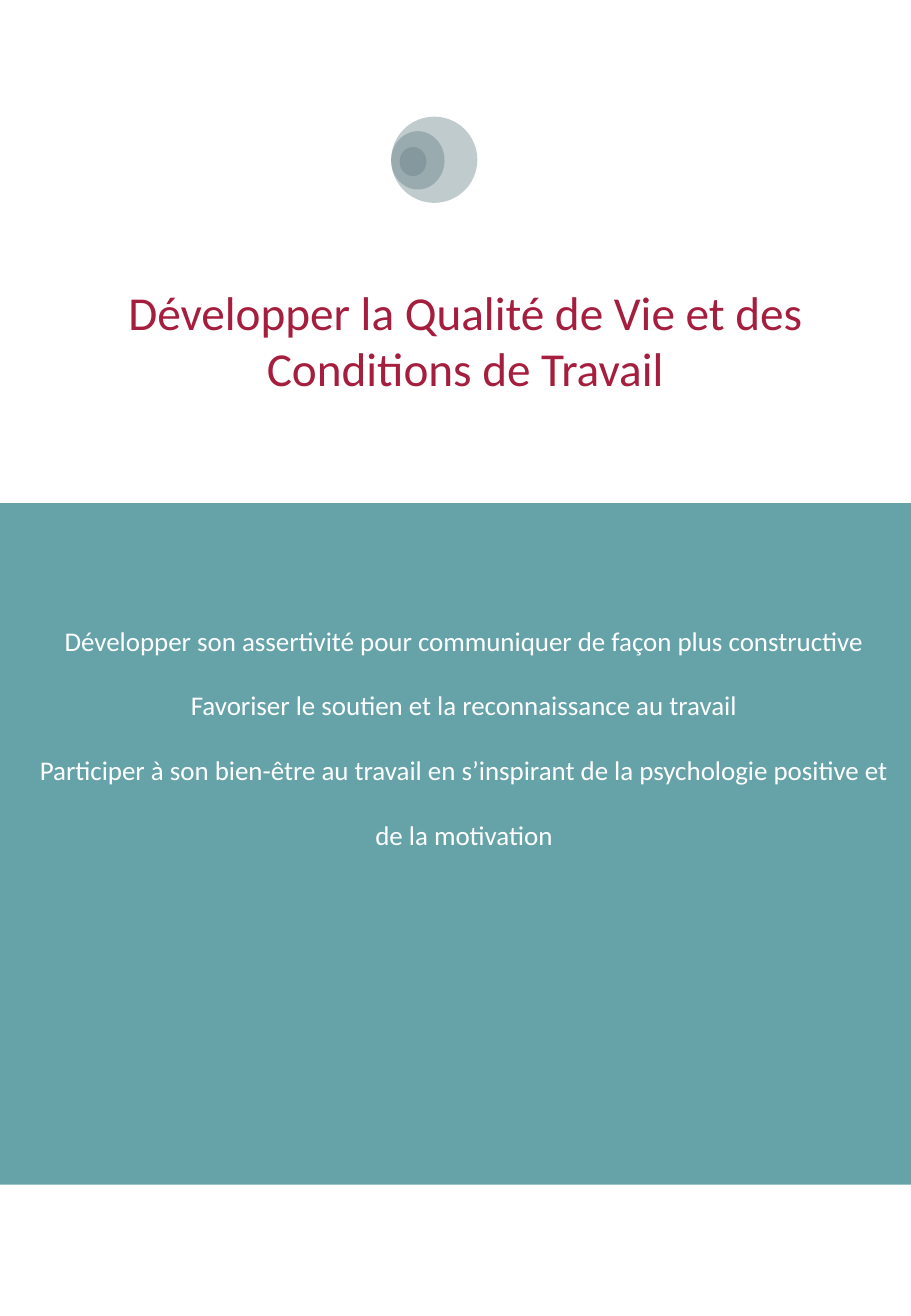
from lxml.etree import SubElement
from pptx import Presentation
from pptx.dml.color import RGBColor
from pptx.enum.shapes import MSO_SHAPE as Shape
from pptx.enum.text import MSO_AUTO_SIZE as AutoSize, PP_ALIGN as Align
from pptx.oxml.ns import qn
from pptx.util import Inches, Pt

TEAL = RGBColor(0x65, 0xA3, 0xA9)
SLATE = RGBColor(0x63, 0x7D, 0x85)
CRIMSON = RGBColor(0xA6, 0x1E, 0x3E)
WHITE = RGBColor(0xFF, 0xFF, 0xFF)
FONT = "Calibri"
PAGE_WIDTH, PAGE_HEIGHT = 7.5, 10.83

TITLE = "Développer la Qualité de Vie et des Conditions de Travail"
GOALS = [
    "Développer son assertivité pour communiquer de façon plus constructive",
    "Favoriser le soutien et la reconnaissance au travail",
    "Participer à son bien-être au travail en s’inspirant de la psychologie "
    "positive et de la motivation",
]
# Offset from the emblem's corner, then width and height
EMBLEM_DISCS = [(0, 0, 0.71, 0.71), (0, 0.12, 0.44, 0.48), (0.07, 0.25, 0.22, 0.24)]


def add_plain_shape(page, kind, box, color):
    shape = page.shapes.add_shape(kind, *map(Inches, box))
    shape.shadow.inherit = False
    shape.fill.solid()
    shape.fill.fore_color.rgb = color
    shape.line.fill.background()
    return shape


def set_opacity(shape, percent):
    color = shape.fill._xPr.find(qn("a:solidFill"))[0]
    SubElement(color, qn("a:alpha"), val=str(percent * 1000))


def add_centred_text(page, box, lines, size, color, spacing=1.0):
    frame = page.shapes.add_textbox(*map(Inches, box)).text_frame
    frame.word_wrap = True
    frame.auto_size = AutoSize.SHAPE_TO_FIT_TEXT
    for index, line in enumerate(lines):
        para = frame.add_paragraph() if index else frame.paragraphs[0]
        para.alignment = Align.CENTER
        para.line_spacing = spacing
        span = para.add_run()
        span.text = line
        span.font.name = FONT
        span.font.size = Pt(size)
        span.font.color.rgb = color


def add_emblem(page, left, top):
    """Overlapping translucent discs, largest at the back."""
    for dx, dy, width, height in EMBLEM_DISCS:
        disc = add_plain_shape(
            page, Shape.OVAL, (left + dx, top + dy, width, height), SLATE)
        set_opacity(disc, 40)


def add_goals_band(page, left, top, width, height):
    add_plain_shape(page, Shape.RECTANGLE, (left, top, width, height), TEAL)
    text_box = (left + 0.15, top + 0.68, width - 0.16, 2.18)
    add_centred_text(page, text_box, GOALS, 16, WHITE, spacing=2.0)


def add_cover(deck):
    page = deck.slides.add_slide(deck.slide_layouts[6])
    add_goals_band(page, 0, 4.14, PAGE_WIDTH, 5.61)
    add_centred_text(page, (0.16, 2.28, 7.34, 1.04), [TITLE], 28, CRIMSON)
    add_emblem(page, 3.22, 0.96)


def main():
    deck = Presentation()
    deck.slide_width = Inches(PAGE_WIDTH)
    deck.slide_height = Inches(PAGE_HEIGHT)
    add_cover(deck)
    deck.save("out.pptx")


if __name__ == "__main__":
    main()
